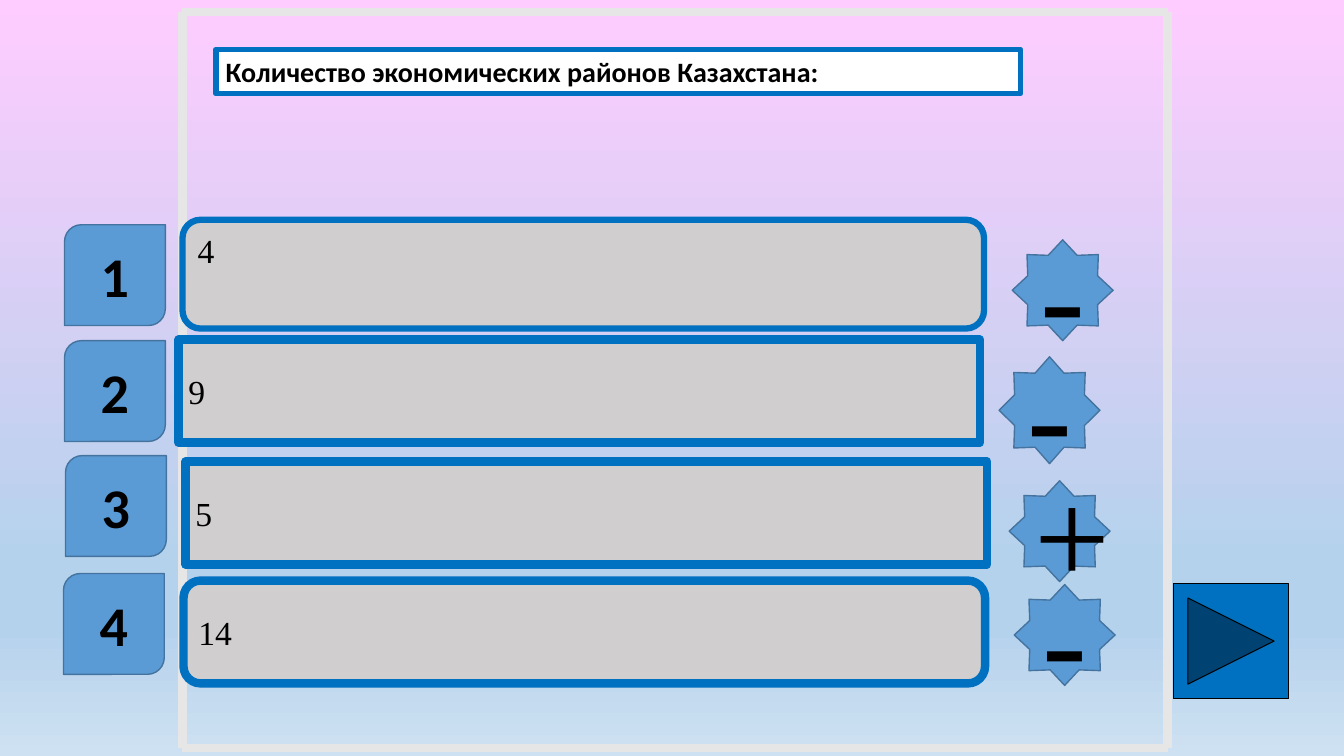
from dataclasses import dataclass

from lxml import etree
from pptx import Presentation
from pptx.dml.color import RGBColor
from pptx.enum.shapes import MSO_CONNECTOR, MSO_SHAPE as Preset
from pptx.enum.text import MSO_ANCHOR as Anchor, MSO_AUTO_SIZE, PP_ALIGN as Align
from pptx.oxml.ns import qn
from pptx.util import Inches, Pt

BLUE, SKY, SKY_LINE = "0070C0", "5B9BD5", "43739E"
GREY, FRAME_GREY, BLACK, WHITE = "D0CECE", "E7E6E6", "000000", "FFFFFF"
BACKGROUND_STOPS = [(0, "FFCCFF"), (74, "B5D2EC"), (83, "B5D2EC"), (100, "CEE1F2")]
SERIF, SANS = "Times New Roman", "Calibri"
BAR_WIDTH, BADGE_SIZE = 7.95, 1


@dataclass
class Answer:
    number: str
    text: str
    mark: str
    origin: tuple  # left and top of the row
    bar: tuple  # left and top within the row, height
    star: tuple  # left and top within the row, height
    rounding: float = 0
    bar_line: float = 6
    anchor: Anchor = Anchor.MIDDLE


ANSWERS = [
    Answer("1", "4", "-", (0.64, 2.23), (1.17, -0.05, 1.08), (9.4, 0.15, 1),
           rounding=0.167, bar_line=4.5, anchor=Anchor.TOP),
    Answer("2", "9", "-", (0.64, 3.38), (1.13, -0.01, 1.02), (9.27, 0.16, 1.06)),
    Answer("3", "5", "+", (0.65, 4.52), (1.19, 0.06, 1.02), (9.36, 0.25, 1)),
    Answer("4", "14", "-", (0.63, 5.69), (1.19, 0.07, 1.02), (9.43, 0.11, 1),
           rounding=0.167),
]


def color(value):
    return RGBColor.from_string(value)


def add_box(slide, preset, box, fill, line, line_width):
    shape = slide.shapes.add_shape(preset, *map(Inches, box))
    shape.shadow.inherit = False
    shape.fill.solid()
    shape.fill.fore_color.rgb = color(fill)
    shape.line.color.rgb = color(line)
    shape.line.width = Pt(line_width)
    return shape


def write(shape, text, font_name, size, bold=False, align=Align.LEFT, anchor=Anchor.MIDDLE):
    frame = shape.text_frame
    frame.word_wrap = True
    frame.vertical_anchor = anchor
    paragraph = frame.paragraphs[0]
    paragraph.text = text
    paragraph.alignment = align
    font = paragraph.font
    font.name, font.size, font.bold = font_name, Pt(size), bold
    font.color.rgb = color(BLACK)


def paint_background(slide):
    fill = slide.background.fill
    fill.gradient()
    fill.gradient_angle = 270
    stops = next(slide.background.element.iter(qn("a:gsLst"))) if hasattr(
        slide.background, "element") else next(slide.element.iter(qn("a:gsLst")))
    for stop in list(stops):
        stops.remove(stop)
    for percent, value in BACKGROUND_STOPS:
        stop = etree.SubElement(stops, qn("a:gs"), pos=str(percent * 1000))
        etree.SubElement(stop, qn("a:srgbClr"), val=value)


def add_frame(slide, box):
    left, top, width, height = box
    right, bottom = left + width, top + height
    group = slide.shapes.add_group_shape()
    sides = [(left, top, right, top), (left, top, left, bottom),
             (left, bottom, right, bottom), (right, top, right, bottom)]
    for side in sides:
        connector = group.shapes.add_connector(MSO_CONNECTOR.STRAIGHT, *map(Inches, side))
        connector.line.color.rgb = color(FRAME_GREY)
        connector.line.width = Pt(6)
        etree.SubElement(connector.element.spPr, qn("a:effectLst"))


def add_question(slide, box, text):
    shape = add_box(slide, Preset.RECTANGLE, box, WHITE, BLUE, 4)
    write(shape, text, SANS, 20, bold=True, anchor=Anchor.TOP)
    shape.text_frame.auto_size = MSO_AUTO_SIZE.SHAPE_TO_FIT_TEXT


def add_answer(slide, answer):
    left, top = answer.origin

    # Answer bar
    dx, dy, height = answer.bar
    bar = add_box(slide, Preset.ROUNDED_RECTANGLE,
                  (left + dx, top + dy, BAR_WIDTH, height), GREY, BLUE, answer.bar_line)
    bar.adjustments[0] = answer.rounding
    write(bar, answer.text, SERIF, 24, anchor=answer.anchor)

    # Number badge
    badge = add_box(slide, Preset.ROUND_2_DIAG_RECTANGLE,
                    (left, top, BADGE_SIZE, BADGE_SIZE), SKY, SKY_LINE, 1)
    write(badge, answer.number, SANS, 40, bold=True, align=Align.CENTER)

    # Star with the verdict
    dx, dy, height = answer.star
    star = add_box(slide, Preset.STAR_8_POINT,
                   (left + dx, top + dy, BADGE_SIZE, height), SKY, SKY_LINE, 1)
    write(star, answer.mark, SERIF, 96, align=Align.CENTER)


def main():
    presentation = Presentation()
    presentation.slide_width, presentation.slide_height = Inches(13.33), Inches(7.5)
    slide = presentation.slides.add_slide(presentation.slide_layouts[6])
    paint_background(slide)
    add_frame(slide, (1.81, 0.12, 9.77, 7.3))
    add_question(slide, (2.14, 0.49, 7.98, 0.44),
                 "Количество экономических районов Казахстана:")
    for answer in ANSWERS:
        add_answer(slide, answer)
    add_box(slide, Preset.ACTION_BUTTON_FORWARD_OR_NEXT,
            (11.64, 5.79, 1.14, 1.14), BLUE, BLACK, 0.75)
    presentation.save("out.pptx")


if __name__ == "__main__":
    main()
